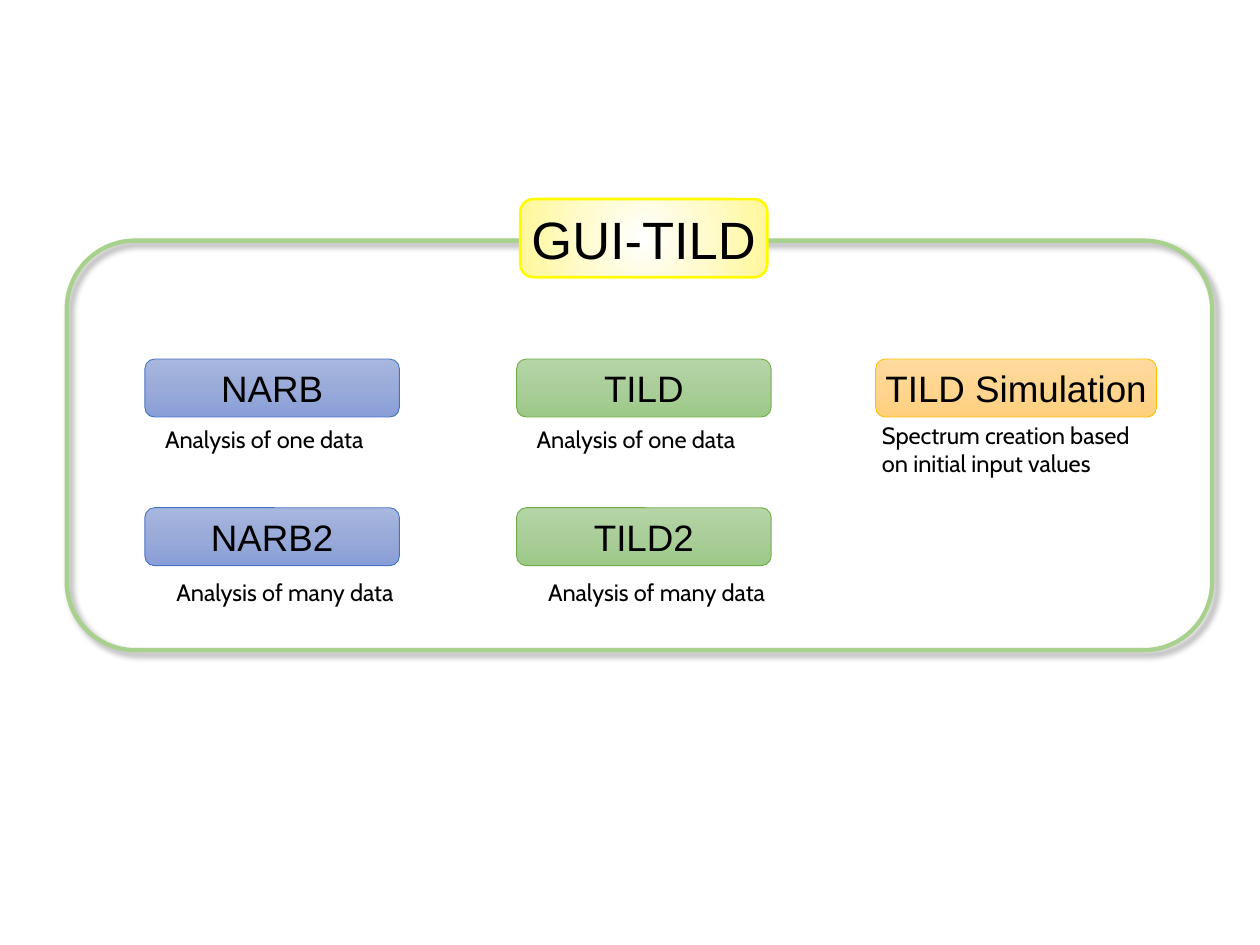
from pptx import Presentation, util as u
from pptx.dml.color import RGBColor
from pptx.enum import shapes, text
from pptx.oxml import parse_xml
from pptx.oxml.ns import nsdecls, qn

BLACK = RGBColor(0x00, 0x00, 0x00)
FRAME_GREEN = RGBColor(0xA9, 0xD1, 0x8E)
YELLOW = RGBColor(0xFF, 0xFC, 0x00)
BLUE = RGBColor(0x44, 0x72, 0xC4)
GREEN = RGBColor(0x70, 0xAD, 0x47)
ORANGE = RGBColor(0xFF, 0xC0, 0x00)

TITLE = "GUI-TILD"
TITLE_STOPS = ("FFFFFF", "FFFBCC", "FFF799")
ONE, MANY = "Analysis of one data", "Analysis of many data"
SIMULATION = "Spectrum creation based on initial input values"

COLUMNS = [
    {"left": 1.15, "width": 2.02, "line": BLUE, "stops": ("A8B7DF", "9AABD9", "889ED7"),
     "modules": [("NARB", ONE), ("NARB2", MANY)]},
    {"left": 4.1, "width": 2.02, "line": GREEN, "stops": ("B5D5A7", "AACE9A", "9CC987"),
     "modules": [("TILD", ONE), ("TILD2", MANY)]},
    {"left": 6.95, "width": 2.23, "line": ORANGE, "stops": ("FFDB9E", "FFD590", "FFD07C"),
     "modules": [("TILD Simulation", SIMULATION)]},
]
CAPTIONS = {
    ONE: {"offset": (0.16, 0.49), "size": (1.68, 0.26), "inset": 0.03, "wrap": False},
    MANY: {"offset": (0.25, 0.53), "size": (1.82, 0.26), "inset": 0.03, "wrap": False},
    SIMULATION: {"offset": (0.05, 0.49), "size": (2.13, 0.45), "inset": 0, "wrap": True},
}
ROW_TOP, ROW_PITCH, BOX_HEIGHT = 2.85, 1.18, 0.46
PAD = 0.03

LINEAR = '<a:lin ang="5400000" scaled="0"/>'
RADIAL = ('<a:path path="circle"><a:fillToRect l="50000" t="50000" '
          'r="50000" b="50000"/></a:path>')
SHADOW = (f'<a:outerShdw {nsdecls("a")} blurRad="{u.Pt(4)}" dist="{u.Pt(3)}" dir="2700000" '
          'rotWithShape="0"><a:srgbClr val="000000"><a:alpha val="40000"/></a:srgbClr>'
          '</a:outerShdw>')


def inches(*lengths):
    return [u.Inches(length) for length in lengths]


def add_rounded(slide, area, line, weight):
    box = slide.shapes.add_shape(shapes.MSO_SHAPE.ROUNDED_RECTANGLE, *inches(*area))
    box.shadow.inherit = False
    box.fill.background()
    box.line.color.rgb = line
    box.line.width = u.Pt(weight)
    return box


def fill_gradient(box, colors, direction):
    stops = "".join(f'<a:gs pos="{i * 50000}"><a:srgbClr val="{color}"/></a:gs>'
                    for i, color in enumerate(colors))
    gradient = parse_xml(f'<a:gradFill {nsdecls("a")} rotWithShape="1">'
                         f'<a:gsLst>{stops}</a:gsLst>{direction}</a:gradFill>')
    properties = box._element.spPr
    properties.replace(properties.find(qn("a:noFill")), gradient)


def write(box, words, size, font, align, insets, wrap, anchor=text.MSO_ANCHOR.TOP):
    frame = box.text_frame
    frame.text = words
    frame.word_wrap = wrap
    frame.auto_size = text.MSO_AUTO_SIZE.SHAPE_TO_FIT_TEXT
    frame.vertical_anchor = anchor
    (frame.margin_left, frame.margin_top,
     frame.margin_right, frame.margin_bottom) = inches(*insets)
    paragraph = frame.paragraphs[0]
    paragraph.alignment = align
    run_font = paragraph.runs[0].font
    run_font.size = u.Pt(size)
    run_font.name = font
    run_font.color.rgb = BLACK
    return paragraph


def add_label(slide, words, area, line, weight, stops, direction, size, wrap, anchor):
    box = add_rounded(slide, area, line, weight)
    fill_gradient(box, stops, direction)
    return write(box, words, size, "Arial", text.PP_ALIGN.CENTER, [PAD] * 4, wrap, anchor)


def add_module(slide, column, row, name, caption):
    left, top = column["left"], ROW_TOP + row * ROW_PITCH
    add_label(slide, name, (left, top, column["width"], BOX_HEIGHT), column["line"], 0.5,
              column["stops"], LINEAR, 21, caption != SIMULATION, text.MSO_ANCHOR.TOP)
    layout = CAPTIONS[caption]
    dx, dy = layout["offset"]
    note = slide.shapes.add_textbox(*inches(left + dx, top + dy, *layout["size"]))
    write(note, caption, 13.5, "Cabin", text.PP_ALIGN.LEFT,
          (0, layout["inset"], 0, 0), layout["wrap"])


def main():
    deck = Presentation()
    deck.slide_width, deck.slide_height = inches(10, 7.5)
    slide = deck.slides.add_slide(deck.slide_layouts[6])

    frame = add_rounded(slide, (0.53, 1.91, 9.09, 3.25), FRAME_GREEN, 2.5)
    frame._element.spPr.find(qn("a:effectLst")).append(parse_xml(SHADOW))

    title = add_label(slide, TITLE, (4.13, 1.58, 1.96, 0.62), YELLOW, 1.5, TITLE_STOPS,
                      RADIAL, 30, False, text.MSO_ANCHOR.MIDDLE)
    title.line_spacing = u.Pt(36)

    for column in COLUMNS:
        for row, (name, caption) in enumerate(column["modules"]):
            add_module(slide, column, row, name, caption)

    deck.save("out.pptx")


if __name__ == "__main__":
    main()
